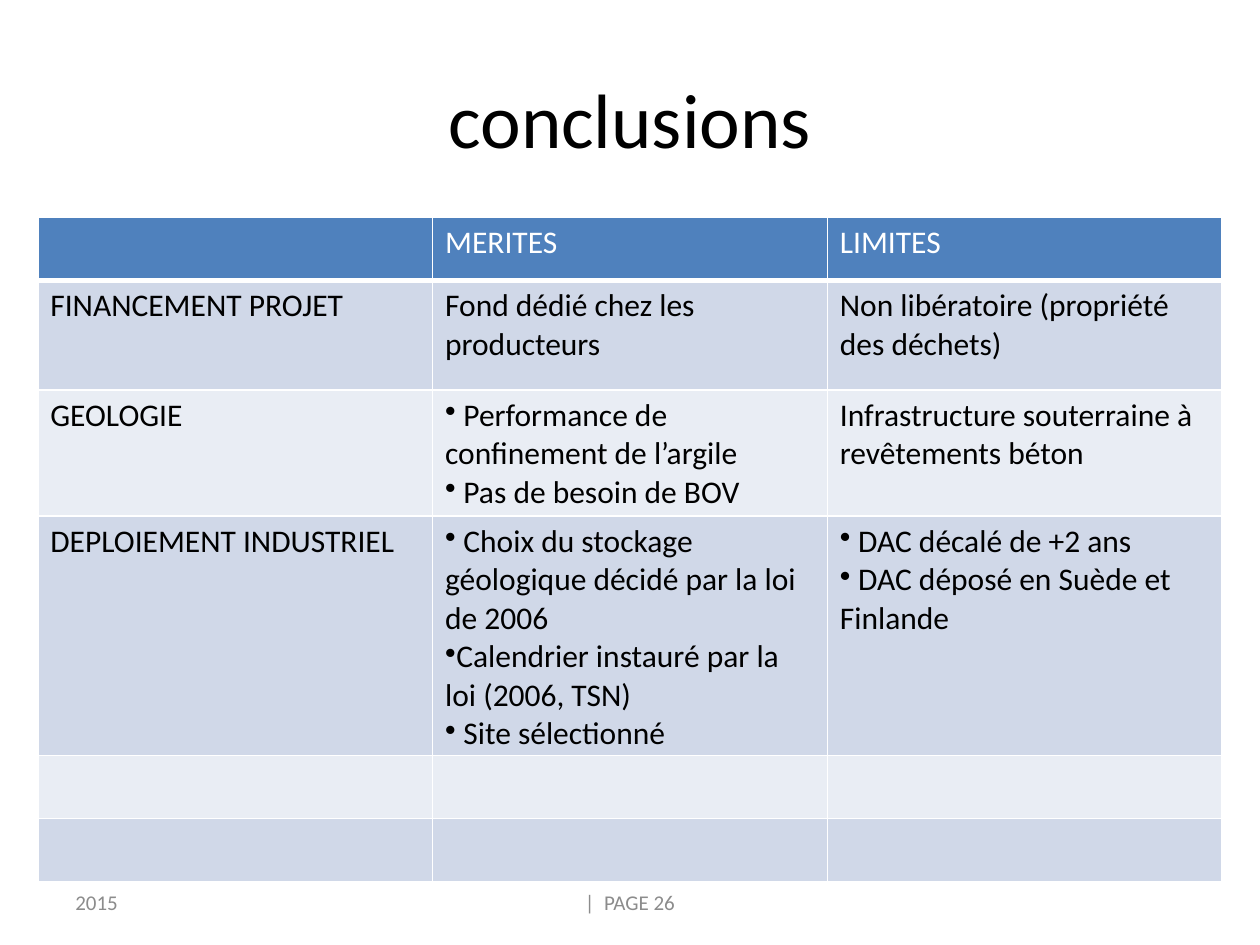
from lxml.etree import SubElement
from pptx import Presentation
from pptx.dml.color import RGBColor
from pptx.enum.text import MSO_ANCHOR as Anchor, PP_ALIGN as Align
from pptx.oxml import parse_xml
from pptx.oxml.ns import nsdecls, qn
from pptx.util import Inches, Pt

BLACK = RGBColor(0x00, 0x00, 0x00)
WHITE = RGBColor(0xFF, 0xFF, 0xFF)
GREY = RGBColor(0x8C, 0x8C, 0x8C)
HEADER = RGBColor(0x4F, 0x81, 0xBD)
BANDS = (RGBColor(0xE9, 0xED, 0xF4), RGBColor(0xD0, 0xD8, 0xE8))

BULLET = "•"
ROW_HEIGHTS = (0.5, 0.87, 0.87, 0.92, 0.5, 0.5)
CONTENT = (
    ("", "MERITES", "LIMITES"),
    ("FINANCEMENT PROJET", "Fond dédié chez les producteurs",
     "Non libératoire (propriété des déchets)"),
    ("GEOLOGIE",
     ("• Performance de confinement de l’argile", "• Pas de besoin de BOV"),
     "Infrastructure souterraine à revêtements béton"),
    ("DEPLOIEMENT INDUSTRIEL",
     ("• Choix du stockage géologique décidé par la loi de 2006",
      "•Calendrier instauré par la loi (2006, TSN)",
      "• Site sélectionné"),
     ("• DAC décalé de +2 ans", "• DAC déposé en Suède et Finlande")),
    ("", "", ""),
    ("", "", ""),
)


class SlideBuilder:
    font = "Calibri"
    cell_size = 18

    def __init__(self, deck):
        self.width, self.height = deck.slide_width, deck.slide_height
        self.page = deck.slides.add_slide(deck.slide_layouts[6])

    def place(self, left, top, width, height):
        return (int(left * self.width), int(top * self.height),
                int(width * self.width), int(height * self.height))

    def fill_para(self, para, text, size, color):
        para.font.size = Pt(size)
        if text.startswith(BULLET):
            SubElement(para._p.get_or_add_pPr(), qn("a:buChar"), char=BULLET)
            text = text[len(BULLET):]
        if text:
            span = para.add_run()
            span.text = text
            span.font.name = self.font
            span.font.size = Pt(size)
            span.font.bold = False
            span.font.color.rgb = color

    def text(self, share, content, size, color, align=Align.LEFT):
        frame = self.page.shapes.add_textbox(*self.place(*share)).text_frame
        frame.word_wrap = True
        frame.vertical_anchor = Anchor.MIDDLE
        para = frame.paragraphs[0]
        para.alignment = align
        self.fill_para(para, content, size, color)

    def borders(self, cell, bottom):
        properties = cell._tc.get_or_add_tcPr()
        for index, (side, width) in enumerate(zip("LRTB", (1, 1, 1, bottom))):
            properties.insert(index, parse_xml(
                f'<a:ln{side} {nsdecls("a")} w="{Pt(width)}"><a:solidFill>'
                f'<a:srgbClr val="{WHITE}"/></a:solidFill></a:ln{side}>'))

    def cell(self, cell, content, fill, color, bottom):
        cell.fill.solid()
        cell.fill.fore_color.rgb = fill
        self.borders(cell, bottom)
        lines = (content,) if isinstance(content, str) else content
        frame = cell.text_frame
        for index, line in enumerate(lines):
            para = frame.add_paragraph() if index else frame.paragraphs[0]
            self.fill_para(para, line, self.cell_size, color)

    def table(self, share, rows, heights):
        table = self.page.shapes.add_table(
            len(rows), len(rows[0]), *self.place(*share)).table
        table.horz_banding = False
        for row, height in zip(table.rows, heights):
            row.height = Inches(height)
        for number, row in enumerate(rows):
            is_header = number == 0
            fill = HEADER if is_header else BANDS[number % 2]
            color = WHITE if is_header else BLACK
            for column, content in enumerate(row):
                self.cell(table.cell(number, column), content, fill, color,
                          3 if is_header else 1)


def main():
    deck = Presentation()
    deck.slide_width, deck.slide_height = Inches(10), Inches(7.5)
    builder = SlideBuilder(deck)
    builder.text((0.05, 0.04, 0.9, 0.17), "conclusions", 44, BLACK, Align.CENTER)
    builder.table((0.03, 0.23, 0.94, 0.55), CONTENT, ROW_HEIGHTS)
    footer_top, footer_height = 0.93, 0.05
    builder.text((0.05, footer_top, 0.23, footer_height), "2015", 12, GREY)
    builder.text((0.34, footer_top, 0.32, footer_height), "|  PAGE 26", 12, GREY,
                 Align.CENTER)
    deck.save("out.pptx")


if __name__ == "__main__":
    main()
